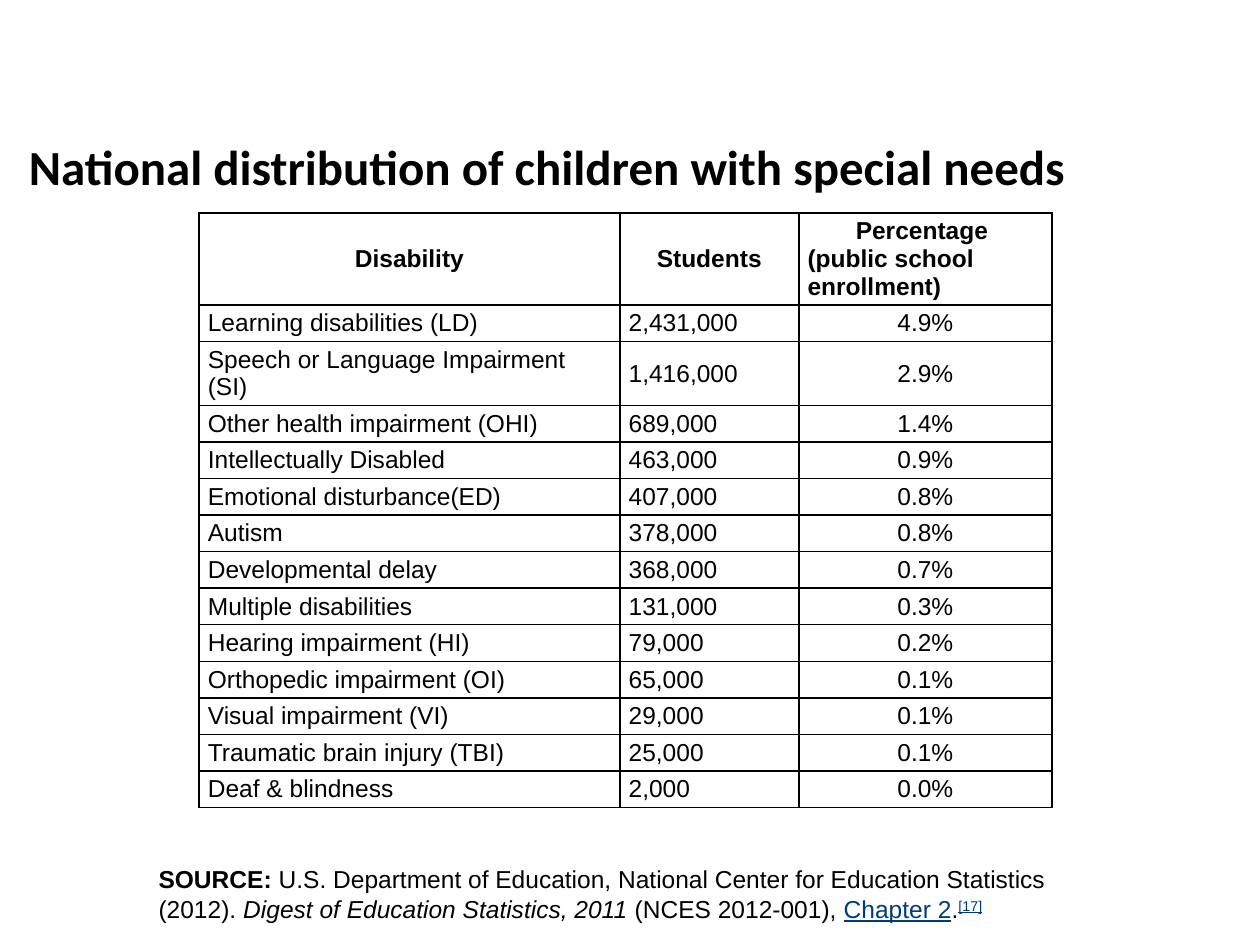
from lxml.etree import SubElement
from pptx import Presentation
from pptx.dml.color import RGBColor
from pptx.enum.text import MSO_ANCHOR as Anchor, MSO_AUTO_SIZE as AutoSize, PP_ALIGN as Align
from pptx.oxml.ns import qn
from pptx.util import Inches, Pt

BLACK = "000000"
LINK = "003C79"

HEADERS = [
    [("Disability", Align.CENTER)],
    [("Students", Align.CENTER)],
    [("Percentage ", Align.CENTER), ("(public school enrollment)", Align.LEFT)],
]
DISABILITIES = [
    ("Learning disabilities (LD)", "2,431,000", "4.9%"),
    ("Speech or Language Impairment (SI)", "1,416,000", "2.9%"),
    ("Other health impairment (OHI)", "689,000", "1.4%"),
    ("Intellectually Disabled", "463,000", "0.9%"),
    ("Emotional disturbance(ED)", "407,000", "0.8%"),
    ("Autism", "378,000", "0.8%"),
    ("Developmental delay", "368,000", "0.7%"),
    ("Multiple disabilities", "131,000", "0.3%"),
    ("Hearing impairment (HI)", "79,000", "0.2%"),
    ("Orthopedic impairment (OI)", "65,000", "0.1%"),
    ("Visual impairment (VI)", "29,000", "0.1%"),
    ("Traumatic brain injury (TBI)", "25,000", "0.1%"),
    ("Deaf & blindness", "2,000", "0.0%"),
]
COLUMN_ALIGNS = [Align.LEFT, Align.LEFT, Align.CENTER]
COLUMN_WIDTHS = [3.34, 1.42, 2.01]
HEADER_HEIGHT, ROW_HEIGHT, WRAPPED_HEIGHT = 0.73, 0.29, 0.51
WRAPPED_ROW = 2

SOURCE_RUNS = [
    ("SOURCE:", {"bold": True}),
    (" U.S. Department of Education, National Center for Education Statistics (2012). ", {}),
    ("Digest of Education Statistics, 2011", {"italic": True}),
    (" (NCES 2012-001), ", {}),
    ("Chapter 2", {"color": LINK, "underline": True}),
    (".", {}),
    ("[17]", {"color": LINK, "underline": True, "baseline": 30}),
]


def rgb(color):
    return RGBColor.from_string(color)


def add_run(paragraph, text, font="Arial", size=14, color=BLACK, bold=False,
            italic=False, underline=False, baseline=0):
    """Append formatted text; baseline is the superscript rise in percent."""
    run = paragraph.add_run()
    run.text = text
    run.font.name = font
    run.font.size = Pt(size)
    run.font.bold = bold
    run.font.italic = italic
    run.font.underline = underline
    run.font.color.rgb = rgb(color)
    if baseline:
        run.font._element.set("baseline", str(baseline * 1000))


def set_borders(cell, color=BLACK, width=1):
    properties = cell._tc.get_or_add_tcPr()
    for position, side in enumerate(("lnL", "lnR", "lnT", "lnB")):
        line = SubElement(properties, qn(f"a:{side}"), w=str(Pt(width)))
        fill = SubElement(line, qn("a:solidFill"))
        SubElement(fill, qn("a:srgbClr"), val=color)
        properties.insert(position, line)


class SlideBuilder:
    font = "Arial"
    title_font = "Calibri"
    cell_margin = Inches(0.07)

    def __init__(self, slide):
        self.slide = slide

    def title(self, text, left, top, width, height):
        title = self.slide.shapes.title
        title.left, title.top = Inches(left), Inches(top)
        title.width, title.height = Inches(width), Inches(height)
        title.text_frame.vertical_anchor = Anchor.BOTTOM
        paragraph = title.text_frame.paragraphs[0]
        paragraph.alignment = Align.LEFT
        add_run(paragraph, text, font=self.title_font, size=28, bold=True)

    def cell(self, cell, lines, bold=False):
        """Fill a cell with (text, alignment) lines."""
        cell.fill.background()
        set_borders(cell)
        cell.vertical_anchor = Anchor.MIDDLE
        cell.margin_left = cell.margin_right = self.cell_margin
        cell.margin_top = cell.margin_bottom = self.cell_margin // 2
        frame = cell.text_frame
        for index, (text, alignment) in enumerate(lines):
            paragraph = frame.add_paragraph() if index else frame.paragraphs[0]
            paragraph.alignment = alignment
            add_run(paragraph, text, font=self.font, bold=bold)

    def table(self, left, top):
        heights = [HEADER_HEIGHT] + [ROW_HEIGHT] * len(DISABILITIES)
        heights[WRAPPED_ROW] = WRAPPED_HEIGHT
        table = self.slide.shapes.add_table(
            len(heights), len(COLUMN_WIDTHS), Inches(left), Inches(top),
            Inches(sum(COLUMN_WIDTHS)), Inches(sum(heights))).table
        table.first_row = table.horz_banding = False
        for column, width in zip(table.columns, COLUMN_WIDTHS):
            column.width = Inches(width)
        for row, height in zip(table.rows, heights):
            row.height = Inches(height)
        for column, lines in enumerate(HEADERS):
            self.cell(table.cell(0, column), lines, bold=True)
        for row, values in enumerate(DISABILITIES, start=1):
            for column, line in enumerate(zip(values, COLUMN_ALIGNS)):
                self.cell(table.cell(row, column), [line])

    def text(self, runs, left, top, width, height):
        box = self.slide.shapes.add_textbox(
            Inches(left), Inches(top), Inches(width), Inches(height))
        frame = box.text_frame
        frame.word_wrap = True
        frame.auto_size = AutoSize.SHAPE_TO_FIT_TEXT
        frame.vertical_anchor = Anchor.MIDDLE
        for text, style in runs:
            add_run(frame.paragraphs[0], text, font=self.font, **style)


def main():
    presentation = Presentation()
    presentation.slide_width, presentation.slide_height = Inches(10), Inches(7.5)
    title_only = presentation.slide_layouts[5]
    builder = SlideBuilder(presentation.slides.add_slide(title_only))
    builder.title("National distribution of children with special needs",
                  0.13, 0.68, 10, 0.92)
    builder.table(1.58, 1.69)
    builder.text(SOURCE_RUNS, 1.16, 6.81, 7.35, 0.57)
    presentation.save("out.pptx")


if __name__ == "__main__":
    main()
